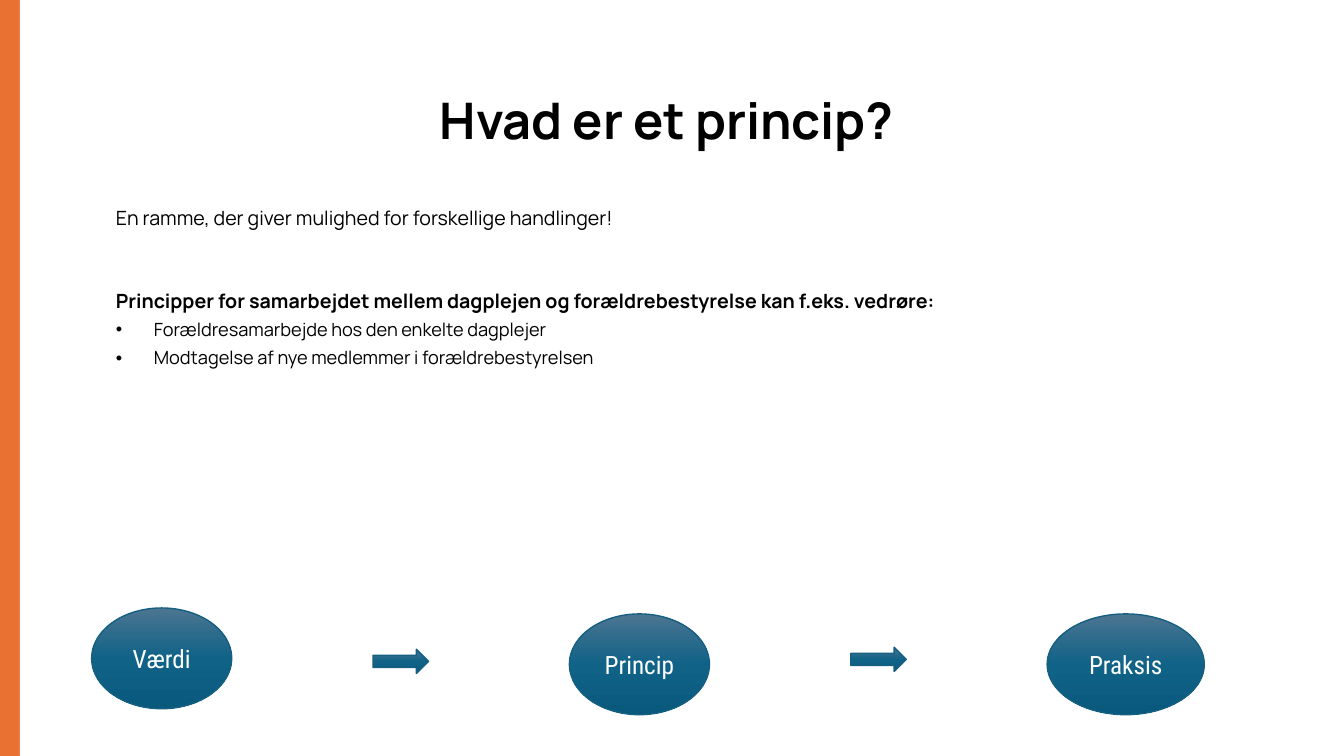
from copy import deepcopy
from dataclasses import dataclass

from lxml import etree
from pptx import Presentation
from pptx.dml.color import RGBColor
from pptx.enum.shapes import MSO_SHAPE
from pptx.enum.text import MSO_ANCHOR, PP_ALIGN
from pptx.oxml.ns import qn
from pptx.util import Cm, Pt

RECTANGLE = MSO_SHAPE.RECTANGLE
OVAL = MSO_SHAPE.OVAL
RIGHT_ARROW = MSO_SHAPE.RIGHT_ARROW
LEFT, CENTER = PP_ALIGN.LEFT, PP_ALIGN.CENTER
TOP, MIDDLE, BOTTOM = MSO_ANCHOR.TOP, MSO_ANCHOR.MIDDLE, MSO_ANCHOR.BOTTOM


@dataclass(frozen=True)
class Theme:
    accent: str = "E97132"
    paper: str = "FFFFFF"
    ink: str = "000000"
    outline: str = "156082"
    gradient: tuple = ("4C7591", "106287", "09597D")
    main_font: str = "Manrope"
    step_font: str = "Roboto Condensed"
    title_size: float = 36
    step_size: float = 18
    body_size: float = 14
    bullet_size: float = 13


THEME = Theme()


def color(value):
    return RGBColor.from_string(value)


def add_bullet(para, indent):
    properties = para._p.get_or_add_pPr()
    properties.set("marL", str(indent))
    properties.set("indent", str(-indent))
    etree.SubElement(properties, qn("a:buFont")).set("typeface", "Arial")
    etree.SubElement(properties, qn("a:buChar")).set("char", "•")


def write(para, text, *, size, font=THEME.main_font, ink=THEME.ink, bold=False,
          align=LEFT, spacing=1.0, before=0, bullet=False):
    if bullet:
        add_bullet(para, Cm(0.96))
    para.alignment = align
    para.line_spacing = spacing
    para.space_before = Pt(before)
    span = para.add_run()
    span.text = text
    span.font.size = Pt(size)
    span.font.name = font
    span.font.bold = bold
    span.font.color.rgb = color(ink)


def add_text_frame(page, box, anchor):
    frame = page.shapes.add_textbox(*map(Cm, box)).text_frame
    frame.word_wrap = True
    frame.vertical_anchor = anchor
    return frame


def add_gradient_shape(page, kind, box):
    shape = page.shapes.add_shape(kind, *map(Cm, box))
    shape.shadow.inherit = False
    shape.fill.gradient()
    shape.fill.gradient_angle = 270
    stops = shape._element.spPr.find(qn("a:gradFill")).find(qn("a:gsLst"))
    stops.insert(1, deepcopy(stops[0]))
    for index, (stop, value) in enumerate(zip(shape.fill.gradient_stops, THEME.gradient)):
        stop.position = index / 2
        stop.color.rgb = color(value)
    shape.line.color.rgb = color(THEME.outline)
    shape.line.width = Pt(1)
    return shape


def draw_background(page, box):
    page.background.fill.solid()
    page.background.fill.fore_color.rgb = color(THEME.accent)
    panel = page.shapes.add_shape(RECTANGLE, *map(Cm, box))
    panel.shadow.inherit = False
    panel.fill.solid()
    panel.fill.fore_color.rgb = color(THEME.paper)
    panel.line.fill.background()


def draw_title(page, box):
    frame = add_text_frame(page, box, BOTTOM)
    write(frame.paragraphs[0], "Hvad er et princip?", size=THEME.title_size,
          bold=True, align=CENTER, spacing=0.9)


def draw_body(page, box):
    frame = add_text_frame(page, box, TOP)
    write(frame.paragraphs[0], "En ramme, der giver mulighed for forskellige handlinger!",
          size=THEME.body_size, spacing=0.9)
    write(frame.add_paragraph(),
          "Principper for samarbejdet mellem dagplejen og forældrebestyrelse kan f.eks. vedrøre:",
          size=THEME.body_size, bold=True, spacing=1.5, before=34)
    for topic in ("Forældresamarbejde hos den enkelte dagplejer",
                  "Modtagelse af nye medlemmer i forældrebestyrelsen"):
        write(frame.add_paragraph(), topic, size=THEME.bullet_size,
              spacing=0.9, before=6, bullet=True)


def draw_process(page, box):
    left, top, width, height = box
    pitch = 12.04
    steps = (("Værdi", 0, 3.53), ("Princip", 0.15, 3.53), ("Praksis", 0.15, 3.96))
    for index, (label, drop, step_width) in enumerate(steps):
        oval = add_gradient_shape(
            page, OVAL, (left + index * pitch, top + drop, step_width, 2.54))
        frame = oval.text_frame
        frame.vertical_anchor = MIDDLE
        write(frame.paragraphs[0], label, size=THEME.step_size,
              font=THEME.step_font, ink=THEME.paper, align=CENTER)
    for index, drop in enumerate((1.04, 0.99)):
        add_gradient_shape(
            page, RIGHT_ARROW, (left + 7.09 + index * pitch, top + drop, 1.4, 0.61))


def main():
    deck = Presentation()
    deck.slide_width, deck.slide_height = Cm(33.87), Cm(19.05)
    page = deck.slides.add_slide(deck.slide_layouts[6])
    draw_background(page, (0.5, 0, 33.37, 19.05))
    draw_title(page, (5.79, 2.13, 22.02, 1.78))
    draw_body(page, (2.67, 5.13, 24.13, 9.8))
    draw_process(page, (2.31, 15.32, 28.04, 2.69))
    deck.save("out.pptx")


if __name__ == "__main__":
    main()
